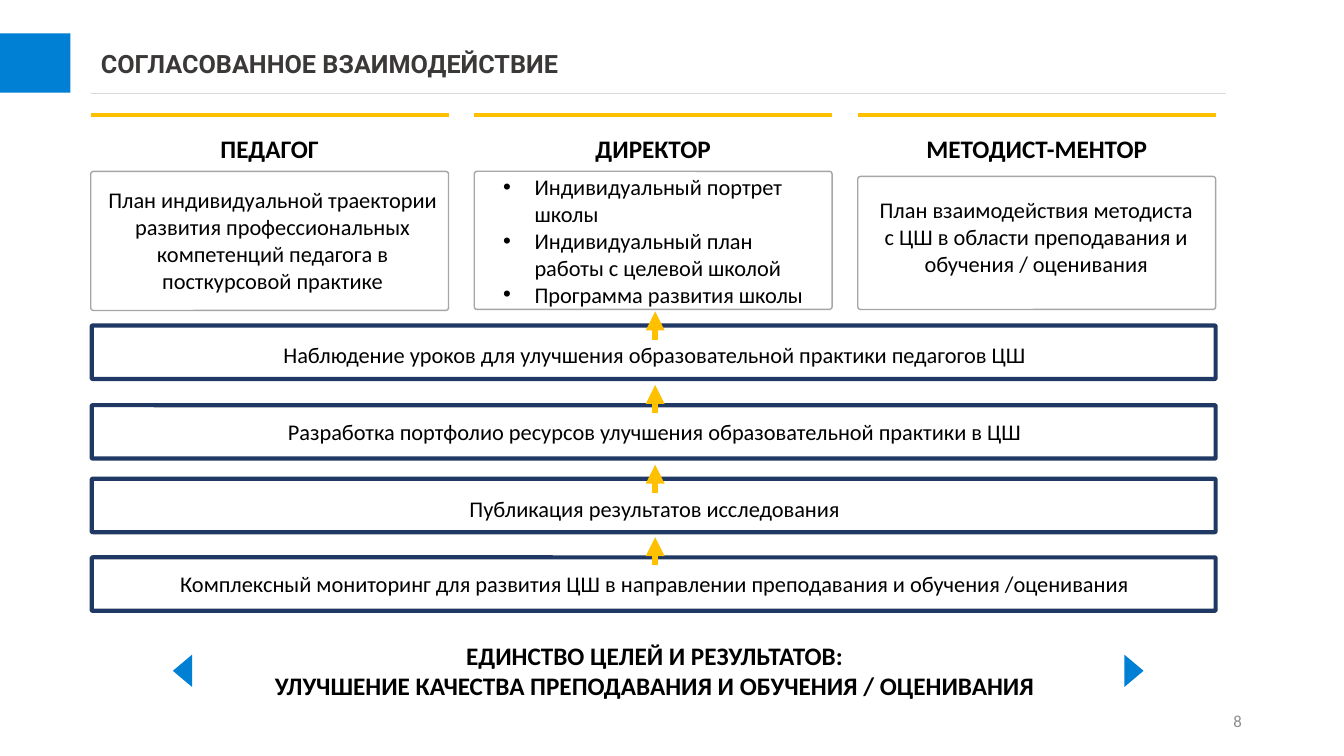
from lxml import etree
from pptx import Presentation
from pptx.dml.color import RGBColor
from pptx.enum import shapes, text
from pptx.oxml.ns import qn
from pptx.util import Pt

BLACK = RGBColor(0x00, 0x00, 0x00)
WHITE = RGBColor(0xFF, 0xFF, 0xFF)
CHARCOAL = RGBColor(0x3B, 0x38, 0x38)
GRAY = RGBColor(0xA6, 0xA6, 0xA6)
LIGHT_GRAY = RGBColor(0xD9, 0xD9, 0xD9)
NUMBER_GRAY = RGBColor(0x8C, 0x8C, 0x8C)
BLUE = RGBColor(0x00, 0x80, 0xD5)
NAVY = RGBColor(0x20, 0x38, 0x64)
GOLD = RGBColor(0xFF, 0xC0, 0x00)

LEFT, CARD_WIDTH, CARD_PITCH = 64.8, 255.6, 273.96
BAR_WIDTH, BAR_HEIGHT = 802.8, 38.16

# Heading, card box (top, height), text box (left, top, width, height), paragraphs
COLUMNS = [
    ("ПЕДАГОГ", (122.4, 99.36), (66.96, 129.6, 255.6, 84.96),
     ["План индивидуальной траектории развития профессиональных "
      "компетенций педагога в посткурсовой практике"]),
    ("ДИРЕКТОР", (122.4, 98.64), (352.08, 120.24, 236.16, 104.4),
     ["Индивидуальный портрет школы",
      "Индивидуальный план работы с целевой школой",
      "Программа развития школы"]),
    ("МЕТОДИСТ-МЕНТОР", (126, 95.04), (620.64, 136.8, 239.04, 99.36),
     ["План взаимодействия методиста с ЦШ в области преподавания и "
      "обучения / оценивания"]),
]

# Bar top, text offset, arrow start offset, wording
BARS = [
    (232.56, 7.92, 10.08, "Наблюдение уроков для улучшения образовательной практики педагогов ЦШ"),
    (289.44, 5.76, 5.76, "Разработка портфолио ресурсов улучшения образовательной практики в ЦШ"),
    (342, 7.92, 10.08, "Публикация результатов исследования"),
    (398.16, 5.76, 5.76, "Комплексный мониторинг для развития ЦШ в направлении "
                         "преподавания и обучения /оценивания"),
]


def place(shape, box):
    shape.left, shape.top, shape.width, shape.height = (Pt(value) for value in box)


def write(shape, lines, size, color=BLACK, bold=False, font="Calibri",
          align=text.PP_ALIGN.CENTER, anchor=text.MSO_ANCHOR.TOP):
    frame = shape.text_frame
    frame.word_wrap = True
    frame.auto_size = text.MSO_AUTO_SIZE.NONE
    frame.vertical_anchor = anchor
    for index, line in enumerate(lines):
        paragraph = frame.add_paragraph() if index else frame.paragraphs[0]
        paragraph.alignment = align
        paragraph.space_before = Pt(0)
        run = paragraph.add_run()
        run.text = line
        run.font.name, run.font.size, run.font.bold = font, Pt(size), bold
        run.font.color.rgb = color


def add_text(slide, box, lines, size, **style):
    shape = slide.shapes.add_textbox(*(Pt(value) for value in box))
    write(shape, lines, size, **style)


def add_box(slide, kind, box, fill, line=None, weight=1):
    shape = slide.shapes.add_shape(kind, *(Pt(value) for value in box))
    shape.shadow.inherit = False
    shape.fill.solid()
    shape.fill.fore_color.rgb = fill
    if line is None:
        shape.line.fill.background()
    else:
        shape.line.color.rgb = line
        shape.line.width = Pt(weight)
    if kind == shapes.MSO_SHAPE.ROUNDED_RECTANGLE:
        shape.adjustments[0] = 0.02
    return shape


def add_line(slide, start, end, color, weight, arrow=False):
    connector = slide.shapes.add_connector(
        shapes.MSO_CONNECTOR.STRAIGHT, *(Pt(value) for value in (*start, *end)))
    connector.line.color.rgb = color
    connector.line.width = Pt(weight)
    if arrow:
        outline = connector.line._get_or_add_ln()
        etree.SubElement(outline, qn("a:tailEnd"), type="triangle")
    etree.SubElement(connector.element.spPr, qn("a:effectLst"))


def add_header(slide, left, top):
    title = slide.shapes.title
    place(title, (left, top + 7.2, 794.16, 51.12))
    write(title, ["СОГЛАСОВАННОЕ ВЗАИМОДЕЙСТВИЕ"], 18, color=CHARCOAL, bold=True,
          font="Roboto", align=text.PP_ALIGN.LEFT)
    add_line(slide, (left, top + 43.2), (left + 810.72, top + 43.2), LIGHT_GRAY, 0.5)
    add_box(slide, shapes.MSO_SHAPE.RECTANGLE, (0, top, 50.4, 42.48), BLUE)


def add_column(slide, left, top, heading, card_span, text_box, lines):
    add_line(slide, (left, top), (left + CARD_WIDTH, top), GOLD, 3)
    add_text(slide, (left + 16.56, top + 9.72, 222.48, 28.8), [heading], 18, bold=True)
    card_top, card_height = card_span
    card = add_box(slide, shapes.MSO_SHAPE.ROUNDED_RECTANGLE,
                   (left, card_top, CARD_WIDTH, card_height), WHITE, GRAY)
    if len(lines) == 1:
        add_text(slide, text_box, lines, 16)
        return
    # Bulleted list in the body placeholder, raised above its card
    body = slide.placeholders[1]
    card.element.addnext(body.element)
    place(body, text_box)
    write(body, lines, 16, align=text.PP_ALIGN.LEFT)
    for paragraph in body.text_frame.paragraphs:
        properties = paragraph._p.get_or_add_pPr()
        properties.set("marL", str(Pt(22.5)))
        properties.set("indent", str(Pt(-22.5)))
        etree.SubElement(properties, qn("a:buFont"), typeface="Arial")
        etree.SubElement(properties, qn("a:buChar"), char="•")


def add_bar(slide, left, top, text_offset, arrow_offset, wording):
    add_box(slide, shapes.MSO_SHAPE.ROUNDED_RECTANGLE,
            (left, top, BAR_WIDTH, BAR_HEIGHT), WHITE, NAVY, 3)
    add_text(slide, (left + 0.72, top + text_offset, BAR_WIDTH, 26.64), [wording], 16)
    arrow_x, arrow_y = left + 402.48, top + arrow_offset
    add_line(slide, (arrow_x, arrow_y), (arrow_x, arrow_y - 20.16), GOLD, 4.5, arrow=True)


def add_footer(slide, left, top):
    add_text(slide, (left, top, 689.04, 51.12),
             ["ЕДИНСТВО ЦЕЛЕЙ И РЕЗУЛЬТАТОВ:",
              "УЛУЧШЕНИЕ КАЧЕСТВА ПРЕПОДАВАНИЯ И ОБУЧЕНИЯ / ОЦЕНИВАНИЯ"], 18, bold=True)
    for offset, rotation in ((-4.32, 270), (675.36, 90)):
        triangle = add_box(slide, shapes.MSO_SHAPE.ISOSCELES_TRIANGLE,
                           (left + offset, top + 18.72, 23.04, 13.68), BLUE)
        triangle.rotation = rotation
    # Slide number
    add_text(slide, (678.24, 500.4, 216, 28.8), ["8"], 12, color=NUMBER_GRAY,
             align=text.PP_ALIGN.RIGHT, anchor=text.MSO_ANCHOR.MIDDLE)


def main():
    presentation = Presentation()
    presentation.slide_width, presentation.slide_height = Pt(960), Pt(540)
    slide = presentation.slides.add_slide(presentation.slide_layouts[1])
    add_header(slide, LEFT, 23.76)
    for index, column in enumerate(COLUMNS):
        add_column(slide, LEFT + index * CARD_PITCH, 82.08, *column)
    for bar in BARS:
        add_bar(slide, LEFT + 0.72, *bar)
    add_footer(slide, 123.12, 453.6)
    presentation.save("out.pptx")


if __name__ == "__main__":
    main()
